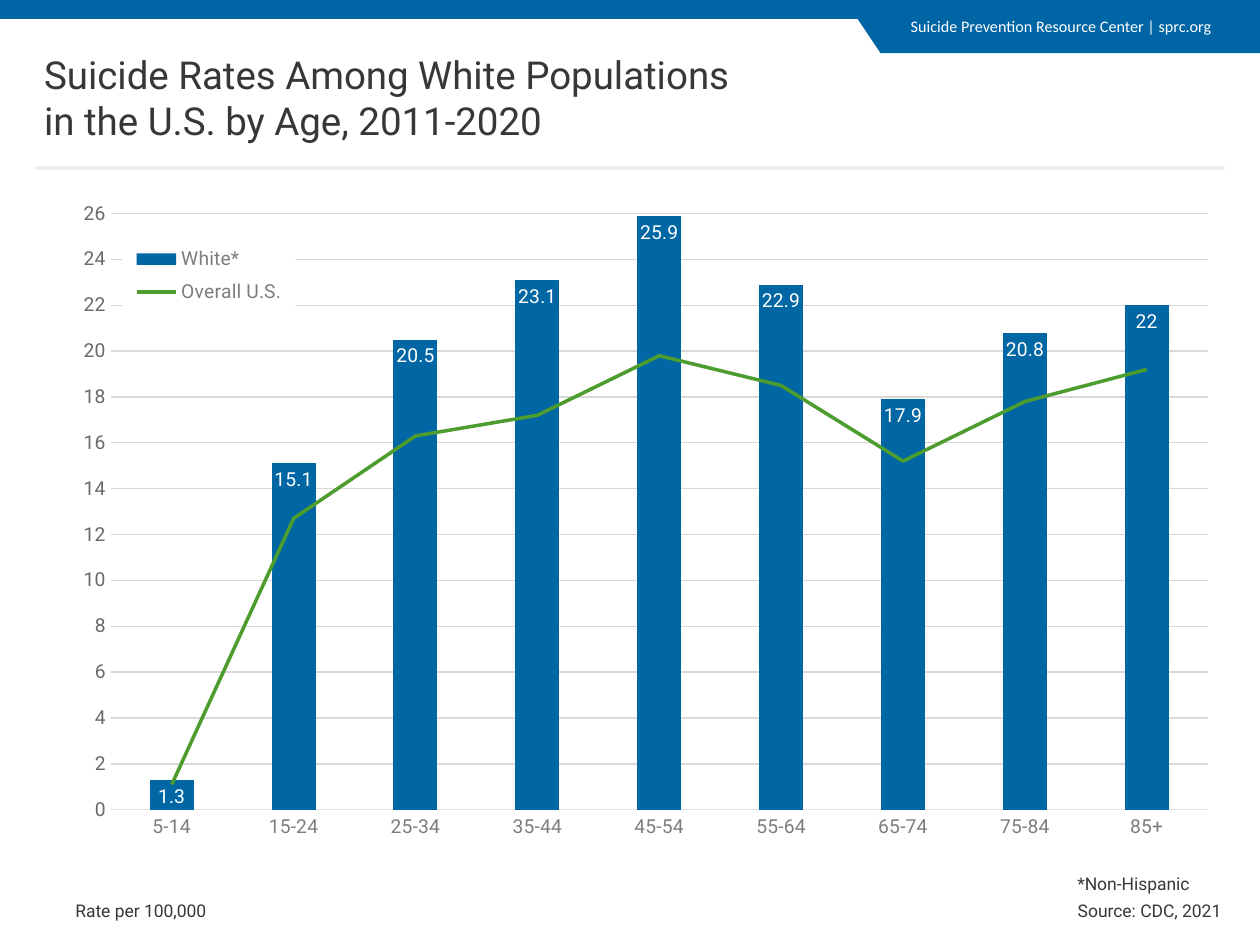
from copy import deepcopy
from dataclasses import dataclass

from lxml.etree import SubElement
from pptx import Presentation
from pptx.chart.data import CategoryChartData
from pptx.dml.color import RGBColor
from pptx.enum.chart import (XL_CHART_TYPE, XL_LABEL_POSITION, XL_LEGEND_POSITION,
                             XL_MARKER_STYLE, XL_TICK_MARK)
from pptx.enum.shapes import MSO_CONNECTOR, MSO_SHAPE
from pptx.enum.text import PP_ALIGN
from pptx.oxml import parse_xml
from pptx.oxml.ns import nsdecls, qn
from pptx.util import Cm, Pt


@dataclass(frozen=True)
class Theme:
    blue: RGBColor = RGBColor(0x00, 0x65, 0xA4)
    bar: RGBColor = RGBColor(0x00, 0x66, 0xA4)
    green: RGBColor = RGBColor(0x4C, 0x9C, 0x2E)
    white: RGBColor = RGBColor(0xFF, 0xFF, 0xFF)
    ink: RGBColor = RGBColor(0x37, 0x37, 0x37)
    gray: RGBColor = RGBColor(0x7D, 0x7D, 0x7D)
    dark_gray: RGBColor = RGBColor(0x69, 0x69, 0x69)
    grid: RGBColor = RGBColor(0xD9, 0xD9, 0xD9)
    axis: RGBColor = RGBColor(0xE1, 0xE1, 0xE1)
    rule: RGBColor = RGBColor(0xF3, 0xF0, 0xEA)
    font: str = "Roboto"
    title: float = 22
    label: float = 11
    note: float = 10
    header: float = 9.2


theme = Theme()


def set_font(font, size, color, name=theme.font):
    font.size, font.name = Pt(size), name
    font.color.rgb = color


def manual_layout(x, y, w, h, inner=False):
    """Return a c:layout element; values are fractions of the chart area."""
    target = '<c:layoutTarget val="inner"/>' if inner else ""
    return parse_xml(
        f'<c:layout {nsdecls("c")}><c:manualLayout>{target}'
        '<c:xMode val="edge"/><c:yMode val="edge"/>'
        f'<c:x val="{x}"/><c:y val="{y}"/><c:w val="{w}"/><c:h val="{h}"/>'
        '</c:manualLayout></c:layout>')


prs = Presentation()
prs.slide_width, prs.slide_height = Cm(25.4), Cm(19.05)
s = prs.slides.add_slide(prs.slide_layouts[6])

# Header band and its tab
band = s.shapes.add_shape(MSO_SHAPE.RECTANGLE, 0, 0, Cm(25.4), Cm(0.38))
builder = s.shapes.build_freeform(Cm(25.4), Cm(0.25))
builder.add_line_segments(
    [(Cm(x), Cm(y)) for x, y in [(25.4, 1.07), (17.75, 1.07), (17.2, 0.25)]])
tab = builder.convert_to_shape()
for sp in (band, tab):
    sp.shadow.inherit = False
    sp.fill.solid()
    sp.fill.fore_color.rgb = theme.blue
    sp.line.fill.background()

# Header, title and notes
texts = [
    ("Suicide Prevention Resource Center | sprc.org", (18.11, 0.2, 7.29, 1.04),
     theme.header, theme.white, "Calibri", PP_ALIGN.LEFT),
    ("Suicide Rates Among White Populations in the U.S. by Age, 2011-2020",
     (0.64, 0.91, 14.6, 2.67), theme.title, theme.ink, theme.font, PP_ALIGN.LEFT),
    ("Source: CDC, 2021", (19.23, 18.01, 5.64, 0.69),
     theme.note, theme.ink, theme.font, PP_ALIGN.RIGHT),
    ("*Non-Hispanic", (21.26, 17.48, 2.97, 0.69),
     theme.note, theme.ink, theme.font, PP_ALIGN.RIGHT),
    ("Rate per 100,000", (1.27, 18.01, 5.51, 0.69),
     theme.note, theme.ink, theme.font, PP_ALIGN.LEFT),
]
for text, box, size, color, name, align in texts:
    tf = s.shapes.add_textbox(*map(Cm, box)).text_frame
    tf.word_wrap = True
    p = tf.paragraphs[0]
    p.text, p.alignment = text, align
    set_font(p.font, size, color, name)

rule = s.shapes.add_connector(
    MSO_CONNECTOR.STRAIGHT, Cm(0.71), Cm(3.38), Cm(24.69), Cm(3.38))
rule.line.color.rgb = theme.rule
rule.line.width = Pt(2.25)
SubElement(rule._element.spPr, qn("a:effectLst"))

# Chart: columns for one group, a line for the overall rate
data = CategoryChartData()
data.categories = ["5-14", "15-24", "25-34", "35-44", "45-54",
                   "55-64", "65-74", "75-84", "85+"]
data.add_series("White*", [1.3, 15.1, 20.5, 23.1, 25.9, 22.9, 17.9, 20.8, 22])
data.add_series("Overall U.S.", [1.1, 12.7, 16.3, 17.2, 19.8, 18.5, 15.2, 17.8, 19.2])
chart = s.shapes.add_chart(XL_CHART_TYPE.COLUMN_CLUSTERED, Cm(1.07), Cm(3.43),
                           Cm(23.29), Cm(13.72), data).chart
chart.has_title = False
set_font(chart.font, theme.note, theme.ink, "Cabin")

columns = chart.plots[0]
columns.gap_width = 177
columns.vary_by_categories = False
white, overall = columns.series
white.format.fill.solid()
white.format.fill.fore_color.rgb = theme.bar
labels = white.data_labels
labels.show_value = True
labels.position = XL_LABEL_POSITION.INSIDE_END
set_font(labels.font, theme.label, theme.white)

# Move the second series into a line plot on the same axes
bar_chart = white._element.getparent()
line_chart = parse_xml(
    f'<c:lineChart {nsdecls("c")}><c:grouping val="standard"/>'
    '<c:varyColors val="0"/></c:lineChart>')
ser = overall._element
for flag in ser.findall(qn("c:invertIfNegative")):
    ser.remove(flag)
line_chart.append(ser)
SubElement(line_chart, qn("c:marker")).set("val", "1")
for axis_id in bar_chart.findall(qn("c:axId")):
    line_chart.append(deepcopy(axis_id))
bar_chart.addnext(line_chart)
overall = chart.plots[1].series[0]
overall.smooth = False
overall.marker.style = XL_MARKER_STYLE.NONE
overall.format.line.color.rgb = theme.green
overall.format.line.width = Pt(2)

# Axes
cat_axis, val_axis = chart.category_axis, chart.value_axis
for axis, color in ((cat_axis, theme.gray), (val_axis, theme.dark_gray)):
    axis.major_tick_mark = axis.minor_tick_mark = XL_TICK_MARK.NONE
    set_font(axis.tick_labels.font, theme.label, color)
val_axis.minimum_scale, val_axis.maximum_scale, val_axis.major_unit = 0, 27, 2
val_axis.format.line.fill.background()
val_axis.has_major_gridlines = True
for line, color in ((cat_axis.format.line, theme.axis),
                    (val_axis.major_gridlines.format.line, theme.grid)):
    line.color.rgb = color
    line.width = Pt(0.75)

# Legend on a white panel over the gridlines
chart.has_legend = True
legend = chart.legend
legend.position = XL_LEGEND_POSITION.BOTTOM
legend.include_in_layout = False
set_font(legend.font, theme.label, theme.gray)
legend_xml = legend._element
for old in legend_xml.findall(qn("c:layout")):
    legend_xml.remove(old)
legend_xml.find(qn("c:legendPos")).addnext(manual_layout(0.06, 0.1, 0.15, 0.11))
legend_xml.find(qn("c:overlay")).addnext(parse_xml(
    f'<c:spPr {nsdecls("c", "a")}><a:solidFill><a:srgbClr val="{theme.white}"/>'
    '</a:solidFill><a:ln><a:noFill/></a:ln></c:spPr>'))

plot_area = bar_chart.getparent()
for old in plot_area.findall(qn("c:layout")):
    plot_area.remove(old)
plot_area.insert(0, manual_layout(0.05, 0.03, 0.95, 0.91, inner=True))

prs.save("out.pptx")
